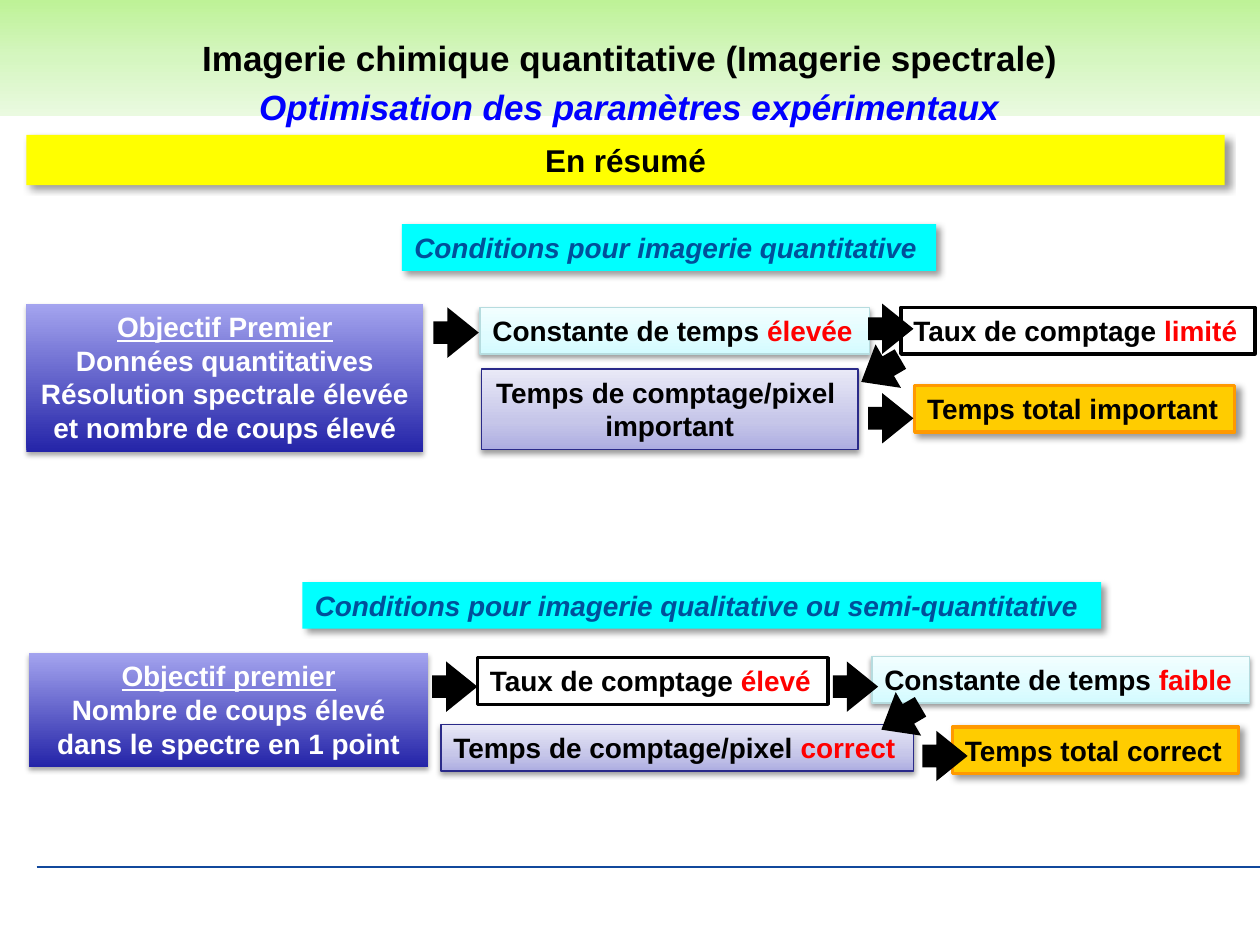
"""Build the summary slide on optimising spectral imaging parameters."""
from lxml import etree
from pptx import Presentation
from pptx.dml.color import RGBColor
from pptx.enum.shapes import MSO_CONNECTOR, MSO_SHAPE
from pptx.enum.text import MSO_ANCHOR, MSO_AUTO_SIZE, PP_ALIGN
from pptx.oxml.ns import qn
from pptx.util import Inches, Pt

RECTANGLE, RIGHT_ARROW = MSO_SHAPE.RECTANGLE, MSO_SHAPE.RIGHT_ARROW
STRAIGHT = MSO_CONNECTOR.STRAIGHT
LEFT, CENTER = PP_ALIGN.LEFT, PP_ALIGN.CENTER
TOP, MIDDLE = MSO_ANCHOR.TOP, MSO_ANCHOR.MIDDLE
FIT_SHAPE, NO_FIT = MSO_AUTO_SIZE.SHAPE_TO_FIT_TEXT, MSO_AUTO_SIZE.NONE

DIAGONAL = {"alpha": 40, "blur": 4, "distance": 3, "angle": 45}
SOFT = {"alpha": 38, "blur": 3.1, "distance": 1.6, "angle": 90}
DEEP = {"alpha": 35, "blur": 3.1, "distance": 1.8, "angle": 90}

THEME = {
    "font": "Arial",
    "rule": ("11489C", 0.75),
    "highlight": "FF0000",
    "styles": {
        "header": {"stops": [(0, "BEF297"), (50, "D5F6C0"), (100, "EAFAE0")],
                   "angle": 270, "size": 20},
        "subtitle": {"color": "0000FF", "size": 20, "italic": True},
        "summary": {"fill": "FFFF00", "shadow": DIAGONAL, "size": 18},
        "heading": {"fill": "00FFFF", "shadow": DIAGONAL, "color": "00509A", "italic": True},
        "goal": {"stops": [(0, "2424A8"), (100, "A4A4EF")], "shadow": DEEP, "color": "FFFFFF"},
        "rate": {"fill": "FFFFFF", "line": ("000000", 2)},
        "constant": {"stops": [(0, "D3FBFF"), (35, "DFFCFF"), (100, "F2FEFF")],
                     "line": ("B6DCDF", 0.75), "shadow": SOFT},
        "pixel": {"stops": [(0, "ADADE1"), (35, "C6C6E9"), (100, "E9E9F7")],
                  "line": ("2A2A89", 0.75), "shadow": SOFT},
        "total": {"fill": "FFCC00", "line": ("FF9900", 2), "shadow": DIAGONAL},
        "arrow": {"fill": "000000"},
    },
}


def paint(shape, style):
    """Apply the fill, outline and shadow of a style."""
    if "stops" in style:
        shape.fill.gradient()
        shape.fill.gradient_angle = style.get("angle", 90)
        stop_list = shape._element.spPr.find(".//" + qn("a:gsLst"))
        stop_list.clear()
        for position, color in style["stops"]:
            stop = etree.SubElement(stop_list, qn("a:gs"), pos=str(position * 1000))
            etree.SubElement(stop, qn("a:srgbClr"), val=color)
    elif "fill" in style:
        shape.fill.solid()
        shape.fill.fore_color.rgb = RGBColor.from_string(style["fill"])
    else:
        shape.fill.background()
    if "line" in style:
        color, width = style["line"]
        shape.line.color.rgb = RGBColor.from_string(color)
        shape.line.width = Pt(width)
    else:
        shape.line.fill.background()
    shape.shadow.inherit = False
    if "shadow" in style:
        shadow = style["shadow"]
        effects = shape._element.spPr.find(qn("a:effectLst"))
        outer = etree.SubElement(
            effects, qn("a:outerShdw"), blurRad=str(Pt(shadow["blur"])),
            dist=str(Pt(shadow["distance"])), dir=str(shadow["angle"] * 60000), rotWithShape="0")
        color = etree.SubElement(outer, qn("a:srgbClr"), val="000000")
        etree.SubElement(color, qn("a:alpha"), val=str(shadow["alpha"] * 1000))


def add_box(shapes, style_name, bounds, paragraphs, align=LEFT, wrap=False,
            anchor=TOP, fit=FIT_SHAPE):
    """Add a styled box whose paragraphs are lists of (text, emphasis) runs."""
    style = THEME["styles"][style_name]
    shape = shapes.add_shape(RECTANGLE, *map(Inches, bounds))
    paint(shape, style)
    frame = shape.text_frame
    frame.word_wrap, frame.auto_size, frame.vertical_anchor = wrap, fit, anchor
    for index, runs in enumerate(paragraphs):
        paragraph = frame.add_paragraph() if index else frame.paragraphs[0]
        paragraph.alignment = align
        for text, emphasis in runs:
            run = paragraph.add_run()
            run.text = text
            formats = {"name": THEME["font"], "size": Pt(style.get("size", 16)), "bold": True,
                       "italic": style.get("italic", False), "underline": emphasis == "underline"}
            for attribute, value in formats.items():
                setattr(run.font, attribute, value)
            color = THEME["highlight"] if emphasis == "highlight" else style.get("color", "000000")
            run.font.color.rgb = RGBColor.from_string(color)


presentation = Presentation()
presentation.slide_width, presentation.slide_height = Inches(10), Inches(7.5)
slide = presentation.slides.add_slide(presentation.slide_layouts[6])

rule = slide.shapes.add_connector(STRAIGHT, Inches(0.29), Inches(6.88), Inches(10), Inches(6.88))
rule.line.color.rgb = RGBColor.from_string(THEME["rule"][0])
rule.line.width = Pt(THEME["rule"][1])
etree.SubElement(rule._element.spPr, qn("a:effectLst"))

add_box(slide.shapes, "summary", (0.21, 1.07, 9.51, 0.4), [[("En résumé", None)]], CENTER, True)
add_box(slide.shapes, "heading", (3.19, 1.78, 4.24, 0.37),
        [[("Conditions pour imagerie quantitative", None)]])
add_box(slide.shapes, "header", (0, 0, 10, 0.92),
        [[("Imagerie chimique quantitative (Imagerie spectrale)", None)]],
        CENTER, anchor=MIDDLE, fit=NO_FIT)
add_box(slide.shapes, "subtitle", (0.35, 0.63, 9.29, 0.44),
        [[("Optimisation des paramètres expérimentaux", None)]], CENTER, True)

flows = [
    {
        "boxes": [
            ("goal", (0.21, 2.41, 3.15, 1.18),
             [[("Objectif Premier", "underline")], [("Données quantitatives", None)],
              [("Résolution spectrale élevée et nombre de coups élevé", None)]], CENTER, True),
            ("rate", (7.15, 2.44, 2.81, 0.37),
             [[("Taux de comptage ", None), ("limité", "highlight")]]),
            ("constant", (3.81, 2.44, 3.09, 0.37),
             [[("Constante de temps ", None), ("élevée", "highlight")]]),
            ("pixel", (3.82, 2.93, 2.99, 0.64),
             [[("Temps de comptage/pixel ", None)], [("important", None)]], CENTER),
            ("total", (7.26, 3.06, 2.54, 0.37), [[("Temps total important", None)]]),
        ],
        "arrows": [(3.44, 2.44, 0), (6.89, 2.41, 0), (6.89, 3.12, 0), (6.81, 2.74, 149.7)],
    },
    {
        "boxes": [
            ("goal", (0.23, 5.18, 3.17, 0.91),
             [[("Objectif premier", "underline")],
              [("Nombre de coups élevé dans le spectre en 1 point", None)]], CENTER, True),
            ("rate", (3.79, 5.22, 2.78, 0.37),
             [[("Taux de comptage ", None), ("élevé", "highlight")]]),
            ("constant", (6.92, 5.21, 3, 0.37),
             [[("Constante de temps ", None), ("faible", "highlight")]]),
            ("pixel", (3.5, 5.75, 3.75, 0.37),
             [[("Temps de comptage/pixel ", None), ("correct", "highlight")]]),
            ("total", (7.56, 5.77, 2.27, 0.37), [[("Temps total correct", None)]]),
            ("heading", (2.4, 4.62, 6.34, 0.37),
             [[("Conditions pour imagerie qualitative ou semi-quantitative", None)]]),
        ],
        "arrows": [(3.43, 5.25, 0), (6.61, 5.25, 0), (6.97, 5.5, 149.7), (7.32, 5.8, 0)],
    },
]
for flow in flows:
    group = slide.shapes.add_group_shape()
    for box in flow["boxes"]:
        add_box(group.shapes, *box)
    for left, top, rotation in flow["arrows"]:
        arrow = group.shapes.add_shape(
            RIGHT_ARROW, Inches(left), Inches(top), Inches(0.36), Inches(0.4))
        arrow.adjustments[0], arrow.adjustments[1] = 0.45, 0.69
        arrow.rotation = rotation
        paint(arrow, THEME["styles"]["arrow"])

presentation.save("out.pptx")
